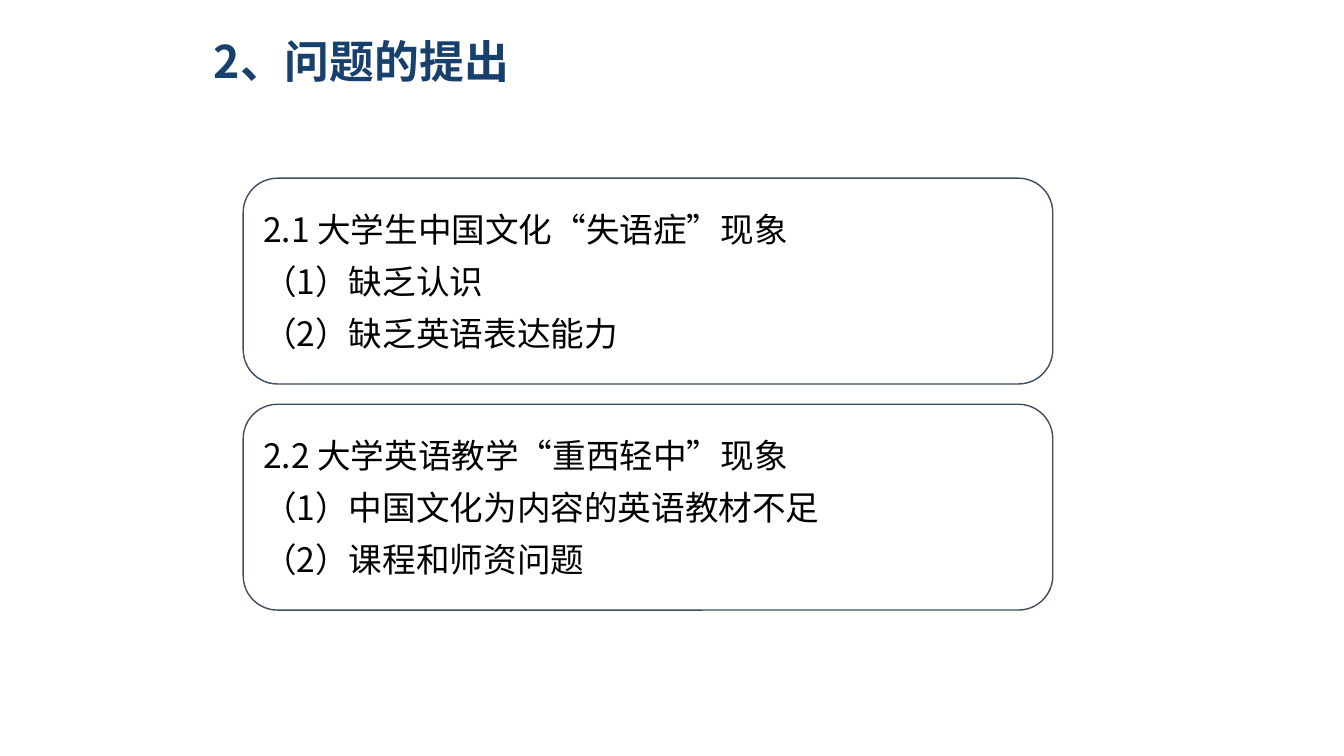
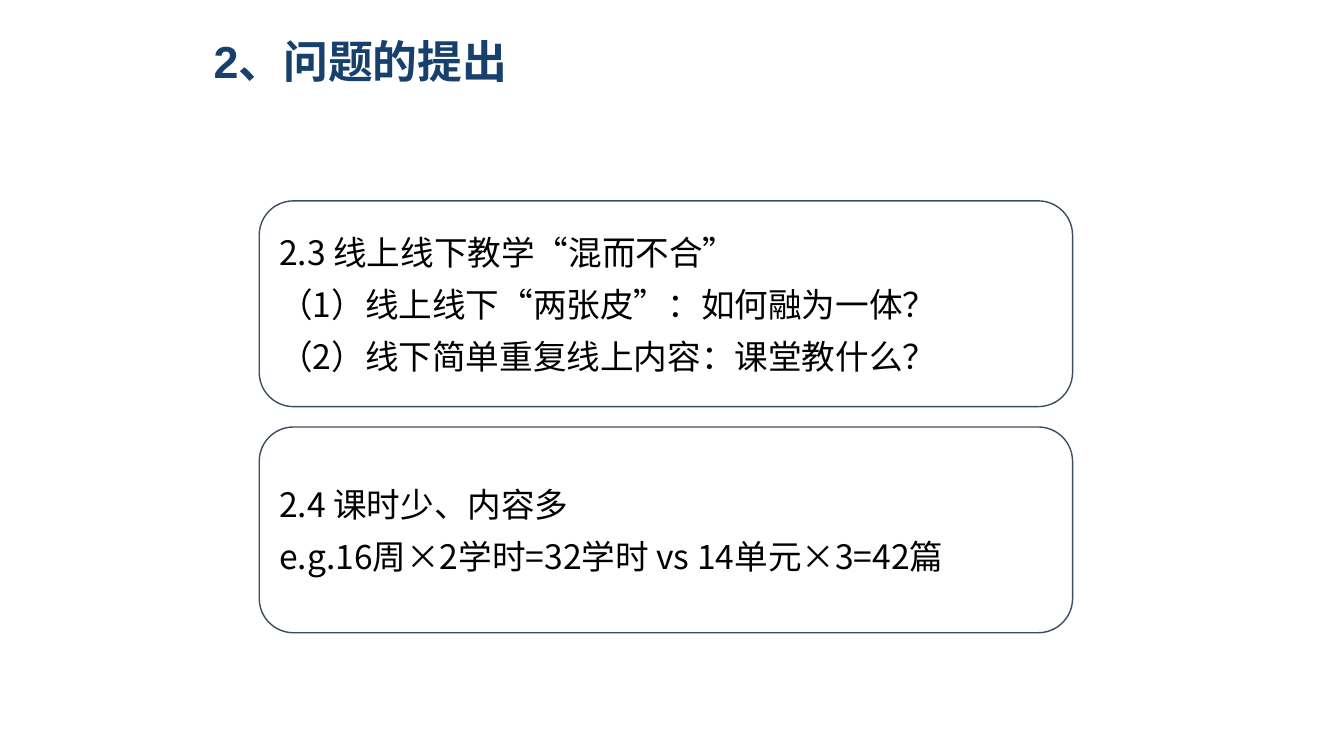
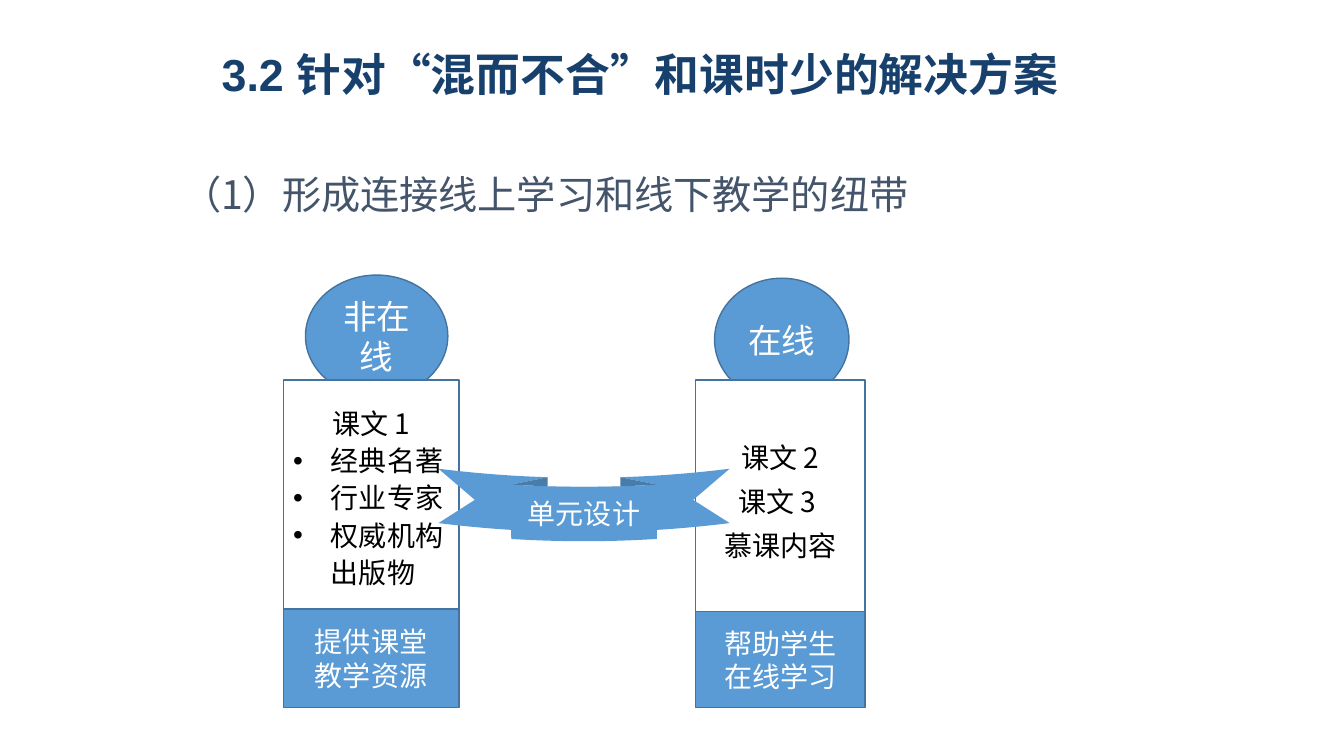
from dataclasses import dataclass

from lxml.etree import SubElement
from pptx import Presentation
from pptx.dml.color import RGBColor
from pptx.enum.shapes import MSO_SHAPE
from pptx.enum.text import MSO_ANCHOR, PP_ALIGN
from pptx.oxml.ns import qn
from pptx.util import Pt


# Theme
@dataclass(frozen=True)
class Theme:
    white: str = "FFFFFF"
    black: str = "000000"
    title: str = "17406D"
    subtitle: str = "44546A"
    card_line: str = "3E4C60"
    blue: str = "5B9BD5"
    blue_line: str = "43739E"
    cjk: str = "Noto Sans CJK SC"
    latin: str = "Arial"
    title_size: float = 32
    subtitle_size: float = 28
    large: float = 24
    small: float = 20
    line_factor: float = 1.21


THEME = Theme()


# Repeated elements
@dataclass(frozen=True)
class Area:
    left: float
    top: float
    width: float
    height: float

    def lengths(self) -> tuple:
        return Pt(self.left), Pt(self.top), Pt(self.width), Pt(self.height)


@dataclass(frozen=True)
class Style:
    size: float
    color: str
    align: PP_ALIGN = PP_ALIGN.CENTER
    leading: float = 1.0
    after: float = 0


@dataclass(frozen=True)
class Column:
    left: float
    width: float
    head: Area
    head_text: str
    lines: tuple[str, ...]
    bullets: tuple[str, ...]
    leading: float
    base_top: float
    base_lines: tuple[str, ...]


# Text helpers
def set_font(font, size: float, color: str, bold: bool = False, name: str = THEME.cjk) -> None:
    font.size = Pt(size)
    font.bold = bold
    font.color.rgb = RGBColor.from_string(color)
    font.name = name


def set_east_asian(span) -> None:
    SubElement(span.font._element, qn("a:ea")).set("typeface", THEME.cjk)


def add_bullet(para, indent: float) -> None:
    properties = para._p.get_or_add_pPr()
    properties.set("marL", str(Pt(indent)))
    properties.set("indent", str(-Pt(indent)))
    SubElement(properties, qn("a:buFont")).set("typeface", THEME.latin)
    SubElement(properties, qn("a:buChar")).set("char", "•")


def write_lines(frame, lines: tuple[str, ...], style: Style, bullets: tuple[str, ...] = ()) -> None:
    frame.word_wrap = True
    frame.vertical_anchor = MSO_ANCHOR.MIDDLE
    for index, line in enumerate(lines + bullets):
        para = frame.paragraphs[0] if index == 0 else frame.add_paragraph()
        is_bullet = index >= len(lines)
        para.alignment = PP_ALIGN.LEFT if is_bullet else style.align
        para.line_spacing = Pt(round(style.size * THEME.line_factor * style.leading, 1))
        para.space_after = Pt(style.after)
        if is_bullet:
            add_bullet(para, 27)
        span = para.add_run()
        span.text = line
        set_font(para.font, style.size, style.color)
        set_font(span.font, style.size, style.color)
        set_east_asian(span)


def add_heading(page, area: Area, parts: tuple[tuple[str, str], ...], size: float,
                color: str, bold: bool) -> None:
    box = page.shapes.add_textbox(*area.lengths())
    box.text_frame.word_wrap = True
    para = box.text_frame.paragraphs[0]
    para.line_spacing = Pt(50)
    for text, font_name in parts:
        span = para.add_run()
        span.text = text
        set_font(span.font, size, color, bold, font_name)
        set_east_asian(span)


def add_title(page, left: float, top: float, *parts: tuple[str, str]) -> None:
    add_heading(page, Area(left, top, 658, 108), parts, THEME.title_size, THEME.title, True)


# Shape helpers
def add_block(page, kind: MSO_SHAPE, area: Area, fill: str, line: str | None):
    block = page.shapes.add_shape(kind, *area.lengths())
    block.shadow.inherit = False
    block.fill.solid()
    block.fill.fore_color.rgb = RGBColor.from_string(fill)
    if line is None:
        block.line.fill.background()
    else:
        block.line.color.rgb = RGBColor.from_string(line)
        block.line.width = Pt(1)
    return block


def add_cards(page, left: float, top: float, width: float, cards: tuple[tuple[str, ...], ...]) -> None:
    height, gap = 147, 14.5
    style = Style(THEME.large, THEME.black, PP_ALIGN.LEFT, after=8.2)
    for index, lines in enumerate(cards):
        area = Area(left, top + index * (height + gap), width, height)
        card = add_block(page, MSO_SHAPE.ROUNDED_RECTANGLE, area, THEME.white, THEME.card_line)
        write_lines(card.text_frame, lines, style)


def add_column(page, column: Column) -> None:
    body_top, bottom = 271.4, 505.4
    head = add_block(page, MSO_SHAPE.OVAL, column.head, THEME.blue, THEME.blue_line)
    write_lines(head.text_frame, (column.head_text,), Style(THEME.large, THEME.white))

    body_area = Area(column.left, body_top, column.width, 165.6)
    body = add_block(page, MSO_SHAPE.RECTANGLE, body_area, THEME.white, THEME.blue_line)
    body_style = Style(THEME.small, THEME.black, leading=column.leading)
    write_lines(body.text_frame, column.lines, body_style, column.bullets)

    base_area = Area(column.left, column.base_top, column.width, bottom - column.base_top)
    base = add_block(page, MSO_SHAPE.RECTANGLE, base_area, THEME.blue, THEME.blue_line)
    write_lines(base.text_frame, column.base_lines, Style(THEME.small, THEME.white))


# Slides
def build_problem_pages(deck, blank) -> None:
    page = deck.slides.add_slide(blank)
    add_cards(page, 173.7, 127.3, 578.3, (
        ("2.1 大学生中国文化“失语症”现象", "（1）缺乏认识", "（2）缺乏英语表达能力"),
        ("2.2 大学英语教学“重西轻中”现象", "（1）中国文化为内容的英语教材不足", "（2）课程和师资问题"),
    ))
    add_title(page, 145.5, 8.7, ("2、问题的提出", THEME.cjk))

    page = deck.slides.add_slide(blank)
    add_cards(page, 185.2, 143.5, 581, (
        ("2.3 线上线下教学“混而不合”", "（1）线上线下“两张皮”：如何融为一体？",
         "（2）线下简单重复线上内容：课堂教什么？"),
        ("2.4 课时少、内容多", "e.g.16周×2学时=32学时 vs 14单元×3=42篇"),
    ))
    add_title(page, 145.5, 8.7, ("2、问题的提出", THEME.latin))


def build_solution_page(deck, blank) -> None:
    page = deck.slides.add_slide(blank)
    add_heading(page, Area(123, 101.5, 658, 77), (("（1）形成连接线上学习和线下教学的纽带", THEME.cjk),),
                THEME.subtitle_size, THEME.subtitle, False)
    add_title(page, 151.2, 18, ("3.2 ", THEME.latin), ("针对“混而不合”和课时少的解决方案", THEME.cjk))

    columns = (
        Column(202.3, 125.5, Area(218.2, 196.5, 101.7, 87.1), "非在线",
               ("课文 1",), ("经典名著", "行业专家", "权威机构出版物"), 1.1,
               434.9, ("提供课堂", "教学资源")),
        Column(496.8, 121, Area(510.4, 198.7, 96, 87.8), "在线",
               ("课文 2", "课文 3 ", "慕课内容"), (), 1.3,
               437, ("帮助学生", "在线学习")),
    )
    for column in columns:
        add_column(page, column)

    ribbon = add_block(page, MSO_SHAPE.CURVED_DOWN_RIBBON, Area(313.2, 334.8, 208, 51.8), THEME.blue, None)
    write_lines(ribbon.text_frame, ("单元设计",), Style(THEME.small, THEME.white))


def main() -> None:
    deck = Presentation()
    deck.slide_width, deck.slide_height = Pt(960), Pt(540)
    blank = deck.slide_layouts[6]
    build_problem_pages(deck, blank)
    build_solution_page(deck, blank)
    deck.save("out.pptx")


if __name__ == "__main__":
    main()
